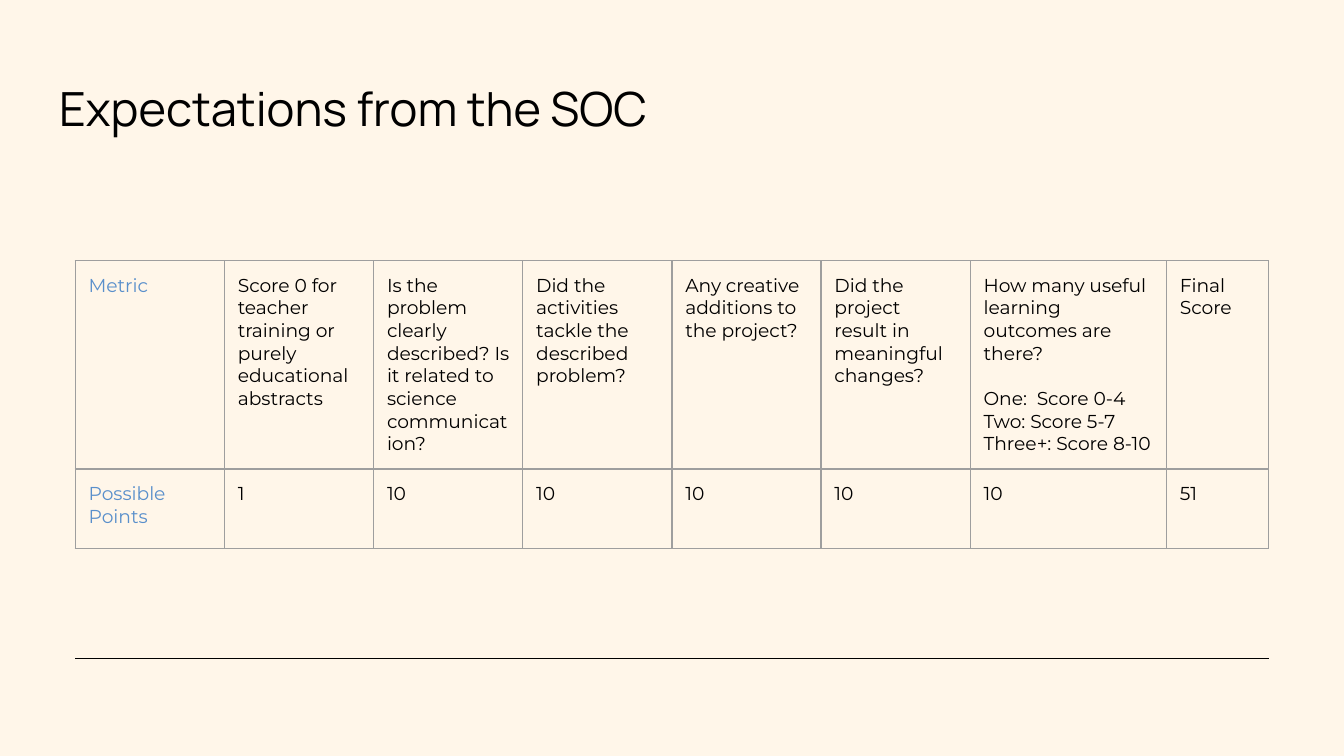
from lxml import etree
from pptx import Presentation
from pptx.dml.color import RGBColor
from pptx.enum import shapes, text
from pptx.oxml import ns
from pptx.util import Inches, Pt

BLACK, BLUE, GREY, CREAM = "000000", "598FCB", "9E9E9E", "FFF6E9"
MARGIN = Inches(0.1)
LEFT, RIGHT = 0.56, 9.44

COLUMN_WIDTHS = [1.11] * 6 + [1.46, 0.76]
ROW_HEIGHTS = [1.55, 0.59]
ROWS = [
    [
        "Metric",
        "Score 0 for teacher training or purely educational abstracts",
        "Is the problem clearly described? Is it related to science communication?",
        "Did the activities tackle the described problem?",
        "Any creative additions to the project?",
        "Did the project result in meaningful changes?",
        "How many useful learning outcomes are there?\n"
        "One:  Score 0-4\nTwo: Score 5-7\nThree+: Score 8-10",
        "Final Score",
    ],
    ["Possible Points", "1", "10", "10", "10", "10", "10", "51"],
]


def rgb(value):
    return RGBColor.from_string(value)


def write(frame, content, font="Montserrat", size=10, color=BLACK):
    """Fill a text frame with one left-aligned paragraph per line of content."""
    frame.word_wrap = True
    frame.text = content
    for paragraph in frame.paragraphs:
        paragraph.alignment = text.PP_ALIGN.LEFT
        paragraph.font.name = font
        paragraph.font.size = Pt(size)
        paragraph.font.color.rgb = rgb(color)


presentation = Presentation()
presentation.slide_width = Inches(10)
presentation.slide_height = Inches(10) * 9 // 16
slide = presentation.slides.add_slide(presentation.slide_layouts[5])
slide.background.fill.solid()
slide.background.fill.fore_color.rgb = rgb(CREAM)

# Title
title = slide.shapes.title
title.left, title.top = Inches(0.34), Inches(0.49)
title.width, title.height = Inches(9.32), Inches(0.63)
write(title.text_frame, "Expectations from the SOC", font="Manrope", size=25.2)
title.text_frame.auto_size = text.MSO_AUTO_SIZE.NONE
title.text_frame.vertical_anchor = text.MSO_ANCHOR.MIDDLE

# Footer rule
rule = slide.shapes.add_connector(
    shapes.MSO_CONNECTOR.STRAIGHT, Inches(LEFT), Inches(4.9), Inches(RIGHT), Inches(4.9)
)
rule.line.color.rgb = rgb(BLACK)
rule.line.width = Pt(0.75)
etree.SubElement(rule._element.spPr, ns.qn("a:effectLst"))

# Scoring table
table = slide.shapes.add_table(
    len(ROWS), len(COLUMN_WIDTHS), Inches(LEFT), Inches(1.94),
    Inches(sum(COLUMN_WIDTHS)), Inches(sum(ROW_HEIGHTS)),
).table
table.first_row = table.horz_banding = False
for column, width in zip(table.columns, COLUMN_WIDTHS):
    column.width = Inches(width)
for row, height in zip(table.rows, ROW_HEIGHTS):
    row.height = Inches(height)

for row, contents in zip(table.rows, ROWS):
    for index, (cell, content) in enumerate(zip(row.cells, contents)):
        write(cell.text_frame, content, color=BLACK if index else BLUE)
        cell.margin_left = cell.margin_right = MARGIN
        cell.margin_top = cell.margin_bottom = MARGIN
        properties = cell._tc.get_or_add_tcPr()
        for side in ("lnL", "lnR", "lnT", "lnB"):
            border = etree.SubElement(properties, ns.qn(f"a:{side}"), w=str(Pt(0.75)))
            fill = etree.SubElement(border, ns.qn("a:solidFill"))
            etree.SubElement(fill, ns.qn("a:srgbClr"), val=GREY)
        cell.fill.background()

# Set the score bands apart from the question above them
outcomes = table.cell(0, 6).text_frame
outcomes.paragraphs[1].space_before = Pt(12.2)

presentation.save("out.pptx")
